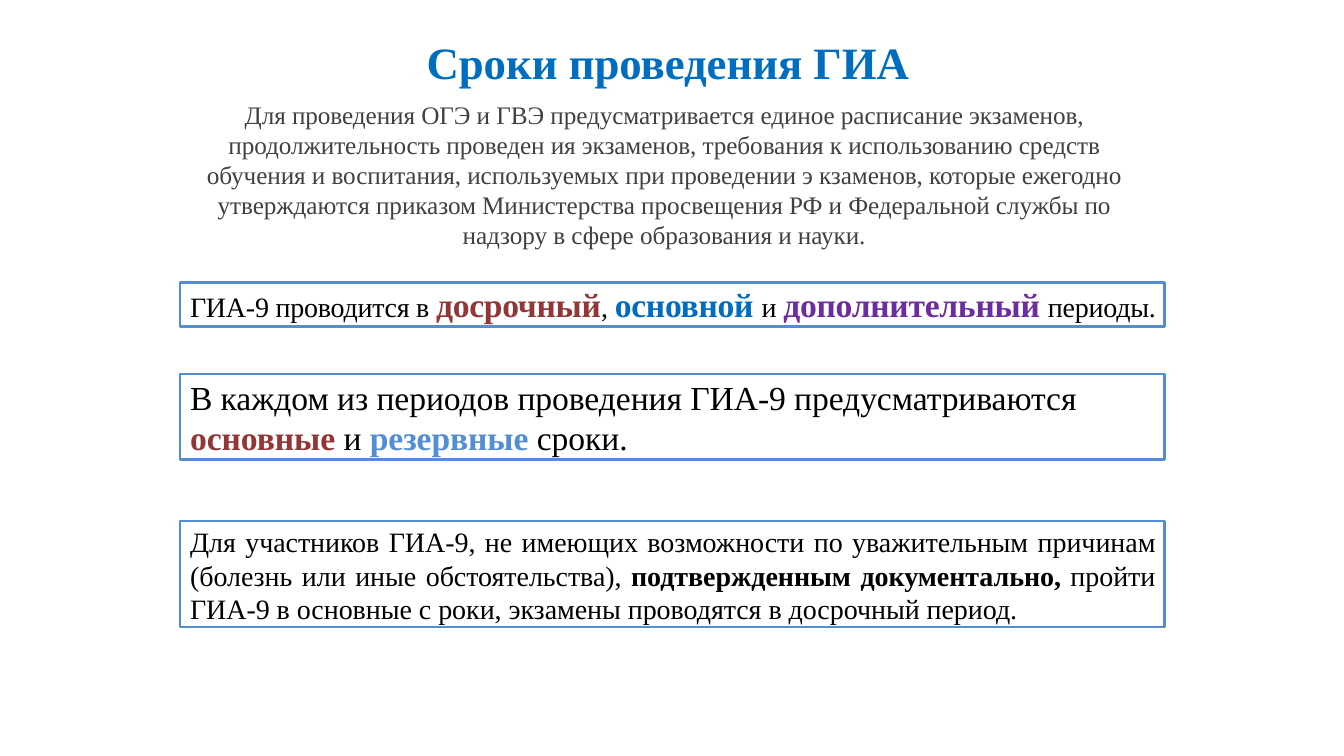
from pptx import Presentation
from pptx.dml.color import RGBColor
from pptx.enum import shapes, text
from pptx.util import Pt

FONT = "Times New Roman"
COLORS = {
    "title": "006EC0", "gray": "404040", "black": "000000", "line": "538ED3",
    "red": "923735", "blue": "006DC0", "violet": "6D2D9F", "sky": "538ED3",
}
LEFT, WIDTH = 128.7, 703

TITLE = "Сроки проведения ГИА"
INTRO = (
    "Для проведения ОГЭ и ГВЭ предусматривается единое расписание экзаменов, "
    "продолжительность проведен ия экзаменов, требования к использованию средств "
    "обучения и воспитания, используемых при проведении э кзаменов, которые ежегодно "
    "утверждаются приказом Министерства просвещения РФ и Федеральной службы по "
    "надзору в сфере образования и науки."
)
# Each part of a line: words, size, colour, bold
PERIODS = [[
    ("ГИА-9 проводится в ", 20, "black", False),
    ("досрочный", 24, "red", True),
    (", ", 20, "black", False),
    ("основной ", 24, "blue", True),
    ("и ", 20, "black", False),
    ("дополнительный ", 24, "violet", True),
    ("периоды.", 20, "black", False),
]]
TERMS = [
    [("В каждом из периодов проведения ГИА-9 предусматриваются", 24, "black", False)],
    [
        ("основные ", 24, "red", True),
        ("и ", 24, "black", False),
        ("резервные ", 24, "sky", True),
        ("сроки.", 24, "black", False),
    ],
]
EARLY = [[
    ("Для участников ГИА-9, не имеющих возможности по уважительным причинам "
     "(болезнь или иные обстоятельства), ", 20, "black", False),
    ("подтвержденным документально, ", 20, "black", True),
    ("пройти ГИА-9 в основные с роки, экзамены проводятся в досрочный период.",
     20, "black", False),
]]


def color(name):
    return RGBColor.from_string(COLORS[name])


def place(shape, left, top, width, height):
    shape.left, shape.top = Pt(left), Pt(top)
    shape.width, shape.height = Pt(width), Pt(height)


def set_frame(frame, inset, left=0, right=0):
    frame.word_wrap = True
    frame.auto_size = text.MSO_AUTO_SIZE.NONE
    frame.vertical_anchor = text.MSO_ANCHOR.TOP
    frame.margin_left, frame.margin_right = Pt(left), Pt(right)
    frame.margin_top, frame.margin_bottom = Pt(inset), Pt(0)


def add_run(para, words, size, tint, bold, track=-5):
    """Add a styled run; track is letter spacing in hundredths of a point."""
    run = para.add_run()
    run.text = words
    font = run.font
    font.name, font.size, font.bold = FONT, Pt(size), bold
    font.color.rgb = color(tint)
    run._r.get_or_add_rPr().set("spc", str(track))


def add_box(slide, top, height, lines, inset, before, pitch=None,
            align=text.PP_ALIGN.LEFT, right=6.5, track=-5):
    box = slide.shapes.add_shape(
        shapes.MSO_SHAPE.RECTANGLE, Pt(LEFT), Pt(top), Pt(WIDTH), Pt(height))
    box.shadow.inherit = False
    box.fill.background()
    box.line.color.rgb = color("line")
    box.line.width = Pt(1.92)
    frame = box.text_frame
    set_frame(frame, inset, 7.2, right)
    for i, parts in enumerate(lines):
        para = frame.add_paragraph() if i else frame.paragraphs[0]
        para.alignment = align
        para.space_before = Pt(0 if i else before)
        if pitch:
            para.line_spacing = Pt(pitch)
        for part in parts:
            add_run(para, *part, track=track)


def add_title(slide):
    title = slide.shapes.title
    place(title, 303, 23.8, 348, 40.3)
    set_frame(title.text_frame, 1)
    title.text_frame.word_wrap = False
    para = title.text_frame.paragraphs[0]
    para.alignment = text.PP_ALIGN.CENTER
    para.space_before = Pt(1)
    add_run(para, TITLE, 32, "title", True)


def add_intro(slide):
    box = slide.shapes.add_textbox(Pt(145.4), Pt(70.6), Pt(658), Pt(109.4))
    set_frame(box.text_frame, 1.4)
    para = box.text_frame.paragraphs[0]
    para.alignment = text.PP_ALIGN.CENTER
    para.line_spacing = 0.99
    para.space_before = Pt(1.1)
    add_run(para, INTRO, 18, "gray", False)


def main():
    deck = Presentation()
    deck.slide_width, deck.slide_height = Pt(960), Pt(540)
    slide = deck.slides.add_slide(deck.slide_layouts[5])
    add_box(slide, 201.6, 31.7, PERIODS, 1.4, 1.2, right=2, track=-20)
    add_box(slide, 267.1, 61.2, TERMS, 2.2, 1.9, 28.8)
    add_box(slide, 372.2, 75.6, EARLY, 2.9, 3, 23.9, text.PP_ALIGN.JUSTIFY)
    add_title(slide)
    add_intro(slide)
    deck.save("out.pptx")


if __name__ == "__main__":
    main()
